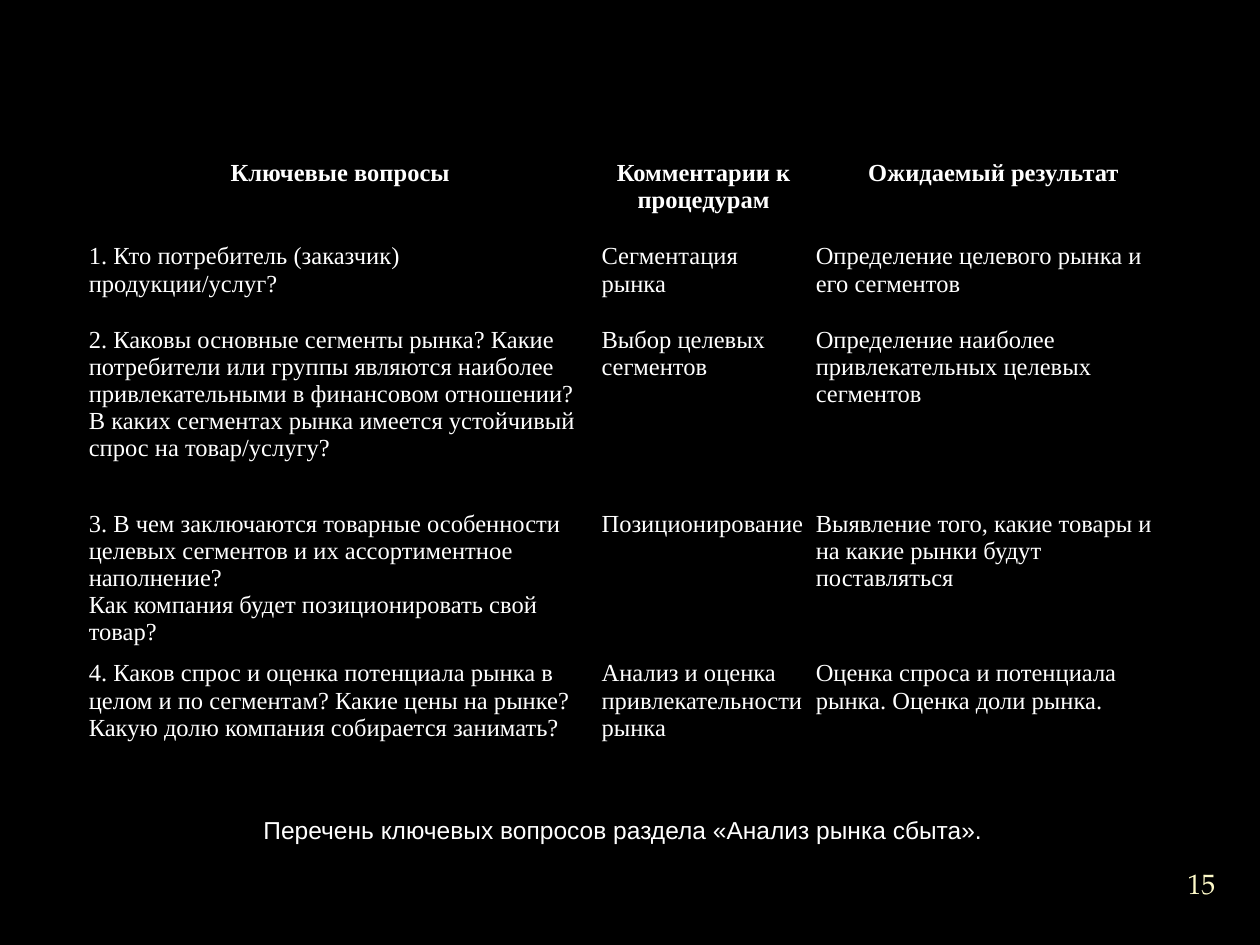
from dataclasses import dataclass

import lxml.etree
import pptx
import pptx.dml.color
import pptx.enum.text
import pptx.oxml.ns
import pptx.util

SLIDE_WIDTH, SLIDE_HEIGHT = 10, 7.5
COLUMN_WIDTHS = (4.07, 1.7, 2.9)
ROW_HEIGHTS = (0.66, 0.66, 1.46, 1.19, 0.92)
CELL_MARGIN = 0.04
BLACK, WHITE, CREAM = "000000", "FFFFFF", "FEFAC9"
ALIGN = pptx.enum.text.PP_ALIGN
ANCHOR = pptx.enum.text.MSO_ANCHOR
inches = pptx.util.Inches


@dataclass(frozen=True)
class Style:
    font: str
    size: float
    colour: str = WHITE
    bold: bool = False
    align: ALIGN = ALIGN.CENTER


@dataclass(frozen=True)
class Caption:
    text: str
    left: float
    top: float
    width: float
    height: float
    style: Style
    anchor: ANCHOR
    indent: float = 0
    margin: float = 0


HEADING = Style("Times New Roman", 14, bold=True)
BODY = Style("Times New Roman", 14, align=ALIGN.LEFT)

ROWS = (
    ("Ключевые вопросы", "Комментарии к процедурам", "Ожидаемый результат"),
    ("1. Кто потребитель (заказчик) продукции/услуг?",
     "Сегментация рынка",
     "Определение целевого рынка и его сегментов"),
    ("2. Каковы основные сегменты рынка? Какие потребители или группы являются "
     "наиболее привлекательными в финансовом отношении?\n"
     "В каких сегментах рынка имеется устойчивый спрос на товар/услугу?",
     "Выбор целевых сегментов",
     "Определение наиболее привлекательных целевых сегментов"),
    ("3. В чем заключаются товарные особенности целевых сегментов и их "
     "ассортиментное наполнение?\n"
     "Как компания будет позиционировать свой товар?",
     "Позиционирование",
     "Выявление того, какие товары и на какие рынки будут поставляться"),
    ("4. Каков спрос и оценка потенциала рынка в целом и по сегментам? Какие цены "
     "на рынке? Какую долю компания собирается занимать?",
     "Анализ и оценка привлекательности рынка",
     "Оценка спроса и потенциала рынка. Оценка доли рынка."),
)

CAPTIONS = (
    Caption("Перечень ключевых вопросов раздела «Анализ рынка сбыта».",
            1.5, 6.42, 6.42, 0.64, Style("Arial", 14), ANCHOR.TOP,
            indent=0.47, margin=0.05),
    Caption("15", 9.2, 6.76, 0.67, 0.5,
            Style("TeX Gyre Pagella", 16, CREAM), ANCHOR.MIDDLE),
)


def rgb(colour: str) -> pptx.dml.color.RGBColor:
    return pptx.dml.color.RGBColor.from_string(colour)


def write(frame, text: str, style: Style) -> None:
    frame.text = text
    frame.word_wrap = True
    for paragraph in frame.paragraphs:
        paragraph.alignment = style.align
        for run in paragraph.runs:
            run.font.name = style.font
            run.font.size = pptx.util.Pt(style.size)
            run.font.bold = style.bold
            run.font.color.rgb = rgb(style.colour)


def set_margins(target, margin: float) -> None:
    target.margin_left = target.margin_right = inches(margin)
    target.margin_top = target.margin_bottom = inches(margin)


def outline_cell(cell, colour: str, points: float) -> None:
    qn = pptx.oxml.ns.qn
    properties = cell._tc.get_or_add_tcPr()
    for side in ("a:lnL", "a:lnR", "a:lnT", "a:lnB"):
        line = lxml.etree.SubElement(properties, qn(side), w=str(pptx.util.Pt(points)))
        fill = lxml.etree.SubElement(line, qn("a:solidFill"))
        lxml.etree.SubElement(fill, qn("a:srgbClr"), val=colour)


def add_questions(slide, left: float, top: float) -> None:
    table = slide.shapes.add_table(
        len(ROWS), len(COLUMN_WIDTHS), inches(left), inches(top),
        inches(sum(COLUMN_WIDTHS)), inches(sum(ROW_HEIGHTS))).table
    table.first_row = table.horz_banding = False
    for column, width in zip(table.columns, COLUMN_WIDTHS):
        column.width = inches(width)
    for index, (row, height, texts) in enumerate(zip(table.rows, ROW_HEIGHTS, ROWS)):
        row.height = inches(height)
        for cell, text in zip(row.cells, texts):
            set_margins(cell, CELL_MARGIN)
            outline_cell(cell, BLACK, 1)
            cell.fill.background()
            write(cell.text_frame, text, BODY if index else HEADING)


def add_caption(slide, caption: Caption) -> None:
    frame = slide.shapes.add_textbox(
        inches(caption.left), inches(caption.top),
        inches(caption.width), inches(caption.height)).text_frame
    set_margins(frame, caption.margin)
    frame.vertical_anchor = caption.anchor
    write(frame, caption.text, caption.style)
    if caption.indent:
        properties = frame.paragraphs[0]._p.get_or_add_pPr()
        properties.set("indent", str(inches(caption.indent)))


def main() -> None:
    presentation = pptx.Presentation()
    presentation.slide_width = inches(SLIDE_WIDTH)
    presentation.slide_height = inches(SLIDE_HEIGHT)
    slide = presentation.slides.add_slide(presentation.slide_layouts[6])
    slide.background.fill.solid()
    slide.background.fill.fore_color.rgb = rgb(BLACK)
    add_questions(slide, (SLIDE_WIDTH - sum(COLUMN_WIDTHS)) / 2, 1.23)
    for caption in CAPTIONS:
        add_caption(slide, caption)
    presentation.save("out.pptx")


if __name__ == "__main__":
    main()
